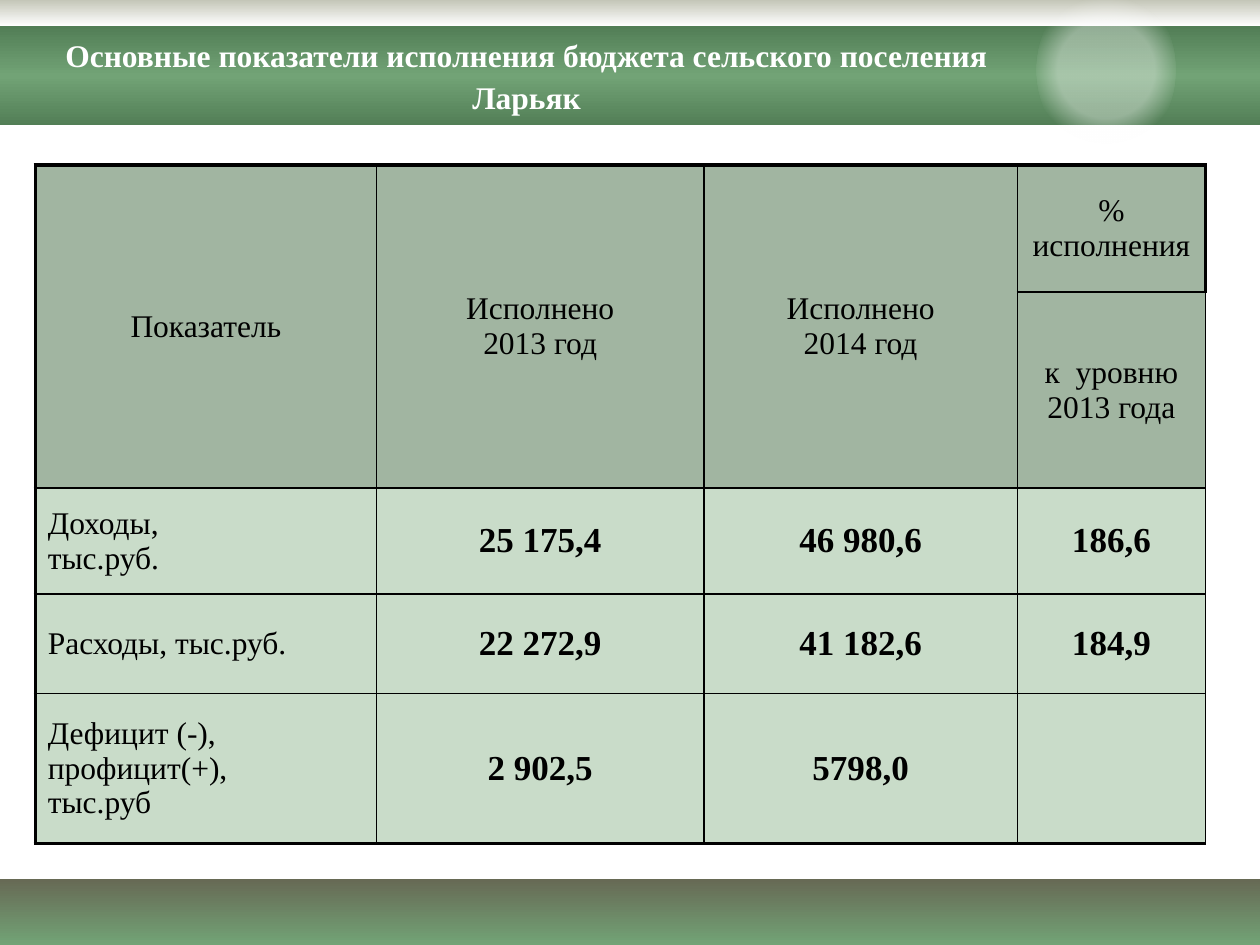
from lxml import etree
from pptx import Presentation
from pptx.dml.color import RGBColor
from pptx.enum import shapes, text
from pptx.oxml import ns, parse_xml
from pptx.util import Cm, Pt

# Content
TITLE = "Основные показатели исполнения бюджета сельского поселения Ларьяк"
HEADER = ["Показатель", "Исполнено\n2013 год", "Исполнено\n2014 год", "% исполнения"]
SUBHEADER = ["", "", "", "к  уровню 2013 года"]
BODY = [
    ["Доходы,\nтыс.руб.", "25 175,4", "46 980,6", "186,6"],
    ["Расходы, тыс.руб.", "22 272,9", "41 182,6", "184,9"],
    ["Дефицит (-), профицит(+),\vтыс.руб", "2 902,5", "5798,0", ""],
]
ROWS = [HEADER, SUBHEADER] + BODY

# Theme: colours, type sizes, line weights
THEME = {
    "font": "Times New Roman",
    "ink": RGBColor(0, 0, 0),
    "light": RGBColor(255, 255, 255),
    "label": 18,
    "value": 20,
    "head_fill": ("4B734B", 52),
    "body_fill": ("76A776", 39),
    "thin": 1,
    "thick": 2.25,
}

# Geometry in cm
WIDTH, HEIGHT = 25.4, 19.05
COLS = [6.88, 6.6, 6.32, 3.79]
HEIGHTS = [2.56, 3.95, 2.13, 2.01, 3.02]
TABLE_AT = (0.71, 3.33)
TITLE_BOX = {"left": 0.71, "top": 0.53, "width": 19.81, "height": 1.8}

# Backdrop: preset, box, stops (position, colour, opacity), radial
RECT, OVAL = shapes.MSO_SHAPE.RECTANGLE, shapes.MSO_SHAPE.OVAL
BACKDROP = [
    (RECT, (0, 17.73, WIDTH, 1.32), [(0, "676A55", 100), (100, "72A376", 100)], False),
    (RECT, (0, 0, WIDTH, 0.53), [(0, "C4C6B8", 100), (100, "FFFFFF", 100)], False),
    (RECT, (0, 0.53, WIDTH, 2),
     [(0, "527E56", 100), (50, "72A376", 100), (100, "527E56", 100)], False),
    (OVAL, (20.9, -0.28, 2.8, 3.4), [(44, "FFFFFF", 38), (67, "FFFFFF", 0)], True),
]


def gradient(stops, radial):
    gs = "".join(
        f'<a:gs pos="{pos * 1000}"><a:srgbClr val="{color}">'
        f'<a:alpha val="{alpha * 1000}"/></a:srgbClr></a:gs>'
        for pos, color, alpha in stops)
    shade = ('<a:path path="circle"><a:fillToRect l="50000" t="50000" r="50000" '
             'b="50000"/></a:path>' if radial else '<a:lin ang="5400000" scaled="0"/>')
    return parse_xml(f'<a:gradFill {ns.nsdecls("a")} rotWithShape="1">'
                     f'<a:gsLst>{gs}</a:gsLst>{shade}</a:gradFill>')


def add_backdrop(s):
    for preset, box, stops, radial in BACKDROP:
        sp = s.shapes.add_shape(preset, *map(Cm, box))
        sp.shadow.inherit = False
        sp.line.fill.background()
        sp._element.spPr.find(ns.qn("a:prstGeom")).addnext(gradient(stops, radial))


def write(tf, content, size, color, bold, align, spacing=1.0):
    tf.text = content
    for p in tf.paragraphs:
        p.alignment = align
        p.line_spacing = spacing
        for key, value in {"name": THEME["font"], "size": Pt(size), "bold": bold}.items():
            for font in [p.font] + [r.font for r in p.runs]:
                setattr(font, key, value)
        for r in p.runs:
            r.font.color.rgb = color


def add_title(s):
    title = s.shapes.title
    s.shapes._spTree.append(title._element)  # in front of the bands
    for key, value in TITLE_BOX.items():
        setattr(title, key, Cm(value))
    tf = title.text_frame
    frame = {"word_wrap": True, "vertical_anchor": text.MSO_ANCHOR.TOP,
             "auto_size": text.MSO_AUTO_SIZE.SHAPE_TO_FIT_TEXT}
    for key, value in frame.items():
        setattr(tf, key, value)
    write(tf, TITLE, THEME["label"], THEME["light"], True, text.PP_ALIGN.CENTER, 1.1)


def set_borders(cell, weights):
    tcPr = cell._tc.get_or_add_tcPr()
    for i, (side, weight) in enumerate(weights.items()):
        tcPr.insert(i, parse_xml(
            f'<a:ln{side} {ns.nsdecls("a")} w="{Pt(weight)}"><a:solidFill>'
            f'<a:srgbClr val="{THEME["ink"]}"/></a:solidFill></a:ln{side}>'))


def set_fill(cell, color, alpha):
    cell.fill.solid()
    cell.fill.fore_color.rgb = RGBColor.from_string(color)
    clr = cell._tc.tcPr.find(".//" + ns.qn("a:srgbClr"))
    etree.SubElement(clr, ns.qn("a:alpha"), val=str(alpha * 1000))


def add_table(s):
    frame = s.shapes.add_table(len(ROWS), len(COLS), *map(Cm, TABLE_AT),
                               Cm(sum(COLS)), Cm(sum(HEIGHTS)))
    table = frame.table
    table.first_row = table.horz_banding = False
    for column, width in zip(table.columns, COLS):
        column.width = Cm(width)
    for row, height in zip(table.rows, HEIGHTS):
        row.height = Cm(height)

    thin, thick = THEME["thin"], THEME["thick"]
    for i, row in enumerate(ROWS):
        for j, content in enumerate(row):
            cell = table.cell(i, j)
            head = i < 2
            value = not head and j > 0
            cell.vertical_anchor = text.MSO_ANCHOR.MIDDLE
            write(cell.text_frame, content, THEME["value" if value else "label"],
                  THEME["ink"], value,
                  text.PP_ALIGN.CENTER if head or value else text.PP_ALIGN.LEFT)
            set_fill(cell, *THEME["head_fill" if head else "body_fill"])
            set_borders(cell, {
                "L": thick if j == 0 else thin,
                "R": thick if i == 0 and j == len(COLS) - 1 else thin,
                "T": thick if i == 0 else thin,
                "B": thick if i == len(ROWS) - 1 else thin,
            })
    # The first three headings span both header rows
    for j in range(3):
        table.cell(0, j).merge(table.cell(1, j))


def main():
    prs = Presentation()
    prs.slide_width, prs.slide_height = Cm(WIDTH), Cm(HEIGHT)
    s = prs.slides.add_slide(prs.slide_layouts[5])
    add_backdrop(s)
    add_table(s)
    add_title(s)
    prs.save("out.pptx")


if __name__ == "__main__":
    main()
